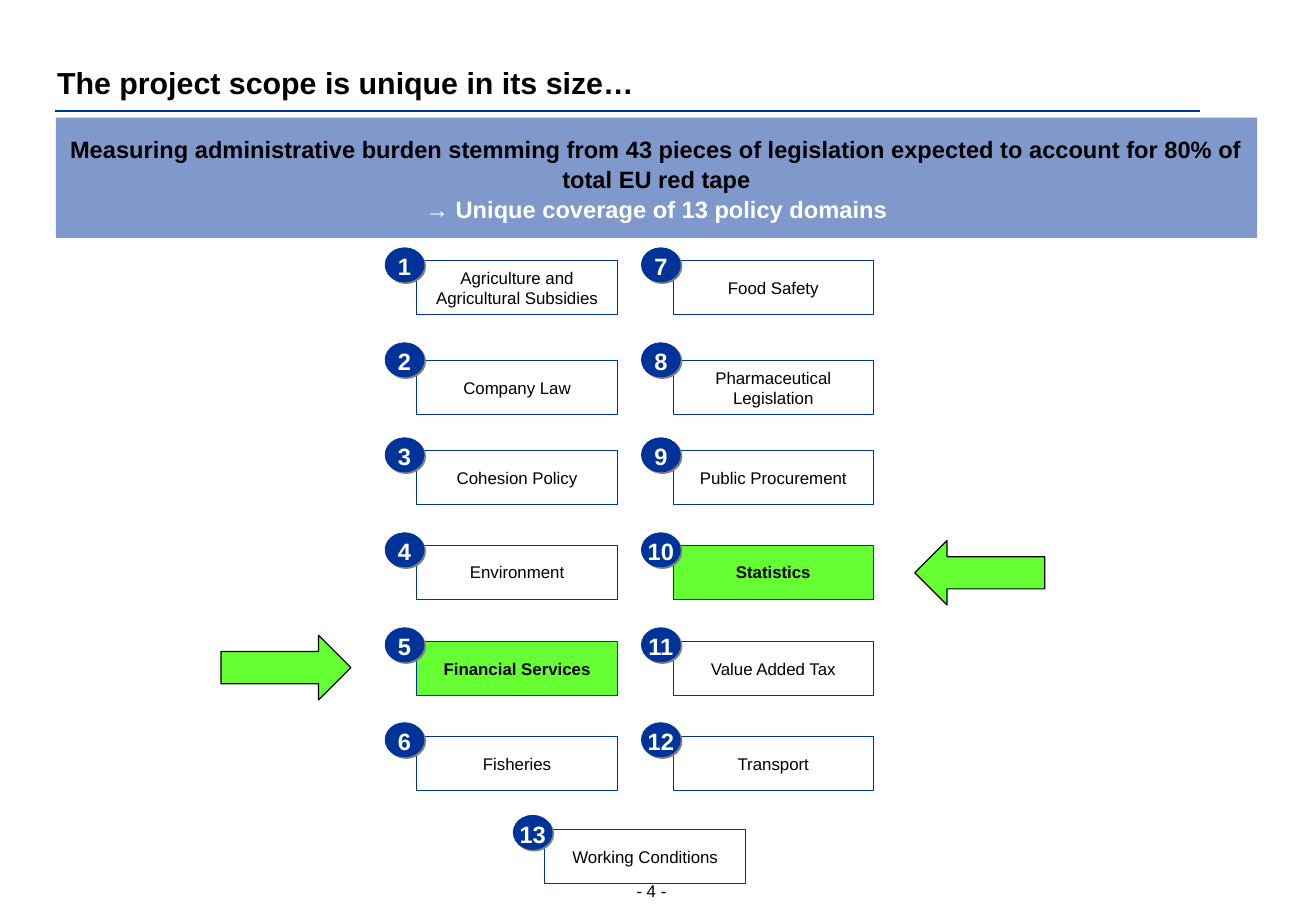
from dataclasses import dataclass

from lxml.etree import SubElement
from pptx import Presentation
from pptx.dml.color import RGBColor
from pptx.enum.shapes import MSO_CONNECTOR, MSO_SHAPE
from pptx.enum.text import MSO_ANCHOR, MSO_AUTO_SIZE, PP_ALIGN
from pptx.oxml.ns import qn
from pptx.shapes.autoshape import Shape
from pptx.slide import Slide
from pptx.text.text import TextFrame
from pptx.util import Pt

COLORS = {
    "navy": "003399",
    "band": "8099CC",
    "highlight": "66FF33",
    "shadow": "808080",
    "black": "000000",
    "white": "FFFFFF",
}
FONT = "Arial"
BOX_WIDTH, BOX_HEIGHT = 118.8, 31.8
BADGE_WIDTH, BADGE_HEIGHT = 23, 20.2
BADGE_OFFSET = 18.7
BADGE_TOP, BADGE_PITCH = 146.9, 56.3
COLUMN_LEFTS = (247, 398.9)
BOX_TOPS = (154.6, 213.8, 267.1, 323.3, 380.3, 436.7)


@dataclass(frozen=True)
class Domain:
    number: int
    name: str
    left: float
    top: float
    badge_top: float
    highlighted: bool = False


@dataclass(frozen=True)
class Arrow:
    left: float
    top: float
    rotation: float


DOMAIN_NAMES = (
    "Agriculture and Agricultural Subsidies",
    "Company Law",
    "Cohesion Policy",
    "Environment",
    "Financial Services",
    "Fisheries",
    "Food Safety",
    "Pharmaceutical Legislation",
    "Public Procurement",
    "Statistics",
    "Value Added Tax",
    "Transport",
)
HIGHLIGHTED = {"Financial Services", "Statistics"}
ARROWS = (Arrow(131, 376.6, 0), Arrow(542.2, 320.4, 180))


def color(name: str) -> RGBColor:
    return RGBColor.from_string(COLORS[name])


def set_frame(frame: TextFrame, margin: float, anchor: MSO_ANCHOR, wrap: bool = True) -> None:
    frame.margin_left = frame.margin_right = Pt(margin)
    frame.margin_top = frame.margin_bottom = Pt(margin)
    frame.vertical_anchor = anchor
    frame.word_wrap = wrap


def add_text(
    frame: TextFrame,
    text: str,
    size: float,
    ink: str = "black",
    bold: bool = False,
    align: PP_ALIGN = PP_ALIGN.CENTER,
    spacing: float = 1.0,
    new: bool = False,
) -> None:
    paragraph = frame.add_paragraph() if new else frame.paragraphs[0]
    paragraph.alignment = align
    paragraph.line_spacing = spacing
    paragraph.space_before = paragraph.space_after = Pt(0)
    run = paragraph.add_run()
    run.text = text
    run.font.name = FONT
    run.font.size = Pt(size)
    run.font.bold = bold
    run.font.color.rgb = color(ink)


def add_block(
    slide: Slide,
    kind: MSO_SHAPE,
    left: float,
    top: float,
    width: float,
    height: float,
    fill: str,
    line: str | None = None,
    line_width: float = 0.5,
) -> Shape:
    shape = slide.shapes.add_shape(kind, Pt(left), Pt(top), Pt(width), Pt(height))
    shape.shadow.inherit = False
    shape.fill.solid()
    shape.fill.fore_color.rgb = color(fill)
    if line is None:
        shape.line.fill.background()
    else:
        shape.line.color.rgb = color(line)
        shape.line.width = Pt(line_width)
    return shape


def add_drop_shadow(shape: Shape) -> None:
    effects = shape._element.spPr.find(qn("a:effectLst"))
    shadow = SubElement(
        effects, qn("a:outerShdw"), dist=str(Pt(1.4)), dir="2700000", algn="ctr", rotWithShape="0"
    )
    SubElement(shadow, qn("a:srgbClr"), val=COLORS["shadow"])


def add_domain(slide: Slide, domain: Domain) -> None:
    fill = "highlight" if domain.highlighted else "white"
    box = add_block(
        slide, MSO_SHAPE.RECTANGLE, domain.left, domain.top, BOX_WIDTH, BOX_HEIGHT, fill, "navy"
    )
    set_frame(box.text_frame, 7.2, MSO_ANCHOR.MIDDLE)
    add_text(box.text_frame, domain.name, 10, bold=domain.highlighted)

    badge = add_block(
        slide, MSO_SHAPE.OVAL, domain.left - BADGE_OFFSET, domain.badge_top,
        BADGE_WIDTH, BADGE_HEIGHT, "navy", "navy",
    )
    add_drop_shadow(badge)
    set_frame(badge.text_frame, 0, MSO_ANCHOR.MIDDLE, wrap=False)
    add_text(badge.text_frame, str(domain.number), 14, "white", True, spacing=1.1)


def list_domains() -> list[Domain]:
    domains = []
    for index, name in enumerate(DOMAIN_NAMES):
        column, row = divmod(index, len(BOX_TOPS))
        badge_top = BADGE_TOP + row * BADGE_PITCH
        domains.append(
            Domain(index + 1, name, COLUMN_LEFTS[column], BOX_TOPS[row], badge_top, name in HIGHLIGHTED)
        )
    domains.append(Domain(13, "Working Conditions", sum(COLUMN_LEFTS) / 2, 491.8, 483.3))
    return domains


def add_heading(slide: Slide) -> None:
    title = slide.shapes.title
    title.left, title.top, title.width, title.height = Pt(33.8), Pt(38.2), Pt(713.5), Pt(21.6)
    set_frame(title.text_frame, 0, MSO_ANCHOR.BOTTOM)
    title.text_frame.auto_size = MSO_AUTO_SIZE.NONE
    add_text(
        title.text_frame, "The project scope is unique in its size…", 18,
        bold=True, align=PP_ALIGN.LEFT, spacing=1.06,
    )

    rule = slide.shapes.add_connector(MSO_CONNECTOR.STRAIGHT, Pt(32.6), Pt(65.7), Pt(711.2), Pt(65.7))
    rule.line.color.rgb = color("navy")
    rule.line.width = Pt(1.5)
    SubElement(rule._element.spPr, qn("a:effectLst"))

    band = add_block(slide, MSO_SHAPE.RECTANGLE, 33.1, 69.8, 712, 71.3, "band")
    set_frame(band.text_frame, 5.8, MSO_ANCHOR.MIDDLE)
    add_text(
        band.text_frame,
        "Measuring administrative burden stemming from 43 pieces of legislation "
        "expected to account for 80% of total EU red tape",
        14, bold=True, spacing=1.06,
    )
    add_text(
        band.text_frame, "→ Unique coverage of 13 policy domains", 14, "white", True,
        spacing=1.06, new=True,
    )


def main() -> None:
    presentation = Presentation()
    presentation.slide_width, presentation.slide_height = Pt(780), Pt(540)
    slide = presentation.slides.add_slide(presentation.slide_layouts[5])
    add_heading(slide)
    for domain in list_domains():
        add_domain(slide, domain)
    for arrow in ARROWS:
        shape = add_block(
            slide, MSO_SHAPE.RIGHT_ARROW, arrow.left, arrow.top, 77, 38.2, "highlight", "black", 0.75
        )
        shape.rotation = arrow.rotation
    page_number = slide.shapes.add_textbox(Pt(377.3), Pt(522), Pt(24.5), Pt(12.2))
    set_frame(page_number.text_frame, 0, MSO_ANCHOR.TOP, wrap=False)
    add_text(page_number.text_frame, "- 4 -", 10, align=PP_ALIGN.LEFT)
    presentation.save("out.pptx")


if __name__ == "__main__":
    main()
